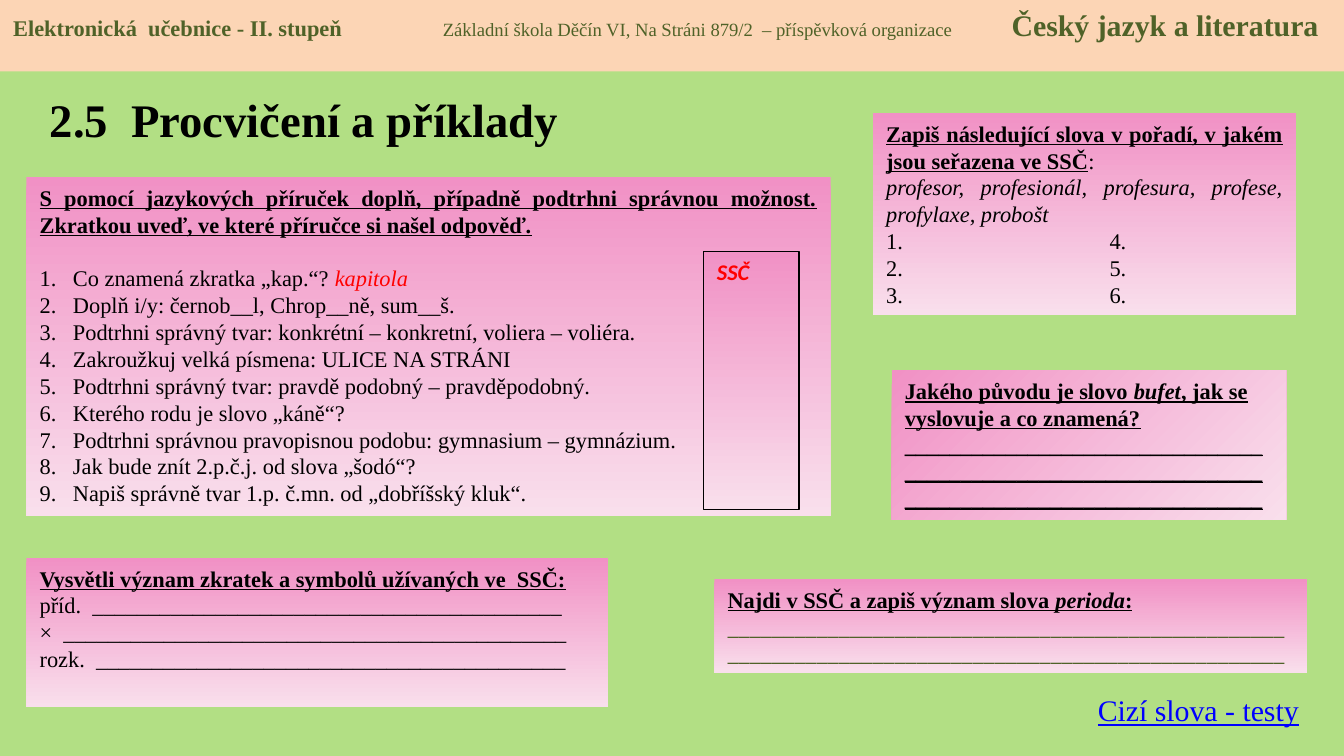
import pptx
import pptx.util
import pptx.dml.color
import pptx.enum.shapes
import pptx.enum.text
import pptx.oxml
import pptx.oxml.ns
from pptx.util import Cm, Pt

SERIF = "Times New Roman"
BLACK, RED, GREEN, BLUE = "000000", "FF0000", "4F6228", "0000FF"
HEADING = dict(bold=True, underline=True)
JUSTIFY = pptx.enum.text.PP_ALIGN.JUSTIFY


def colour(hex_string):
    return pptx.dml.color.RGBColor.from_string(hex_string)


def write(frame, paragraphs, align=pptx.enum.text.PP_ALIGN.LEFT, tabs=(), size=12):
    """Fill frame with paragraphs, each a list of (text, format) runs."""
    frame.word_wrap = True
    frame.vertical_anchor = pptx.enum.text.MSO_ANCHOR.TOP
    for index, runs in enumerate(paragraphs):
        paragraph = frame.paragraphs[0] if index == 0 else frame.add_paragraph()
        paragraph.alignment = align
        if tabs:
            tab_list = pptx.oxml.ns.qn("a:tabLst")
            stops = paragraph._p.get_or_add_pPr().makeelement(tab_list, {})
            paragraph._p.pPr.append(stops)
            for position in tabs:
                stop = stops.makeelement(pptx.oxml.ns.qn("a:tab"), {"pos": str(Cm(position)), "algn": "l"})
                stops.append(stop)
        for text, look in runs:
            run = paragraph.add_run()
            run.text = text
            run.font.name = look.get("font", SERIF)
            run.font.size = Pt(look.get("size", size))
            run.font.color.rgb = colour(look.get("color", BLACK))
            run.font.bold = look.get("bold", False)
            run.font.italic = look.get("italic", False)
            run.font.underline = look.get("underline", False)


presentation = pptx.Presentation()
presentation.slide_width, presentation.slide_height = Cm(25.4), Cm(14.29)
slide = presentation.slides.add_slide(presentation.slide_layouts[5])
slide.background.fill.solid()
slide.background.fill.fore_color.rgb = colour("B2DF84")

# Title
title = slide.shapes.title
title.left, title.top, title.width, title.height = Cm(0.69), Cm(1.55), Cm(12.8), Cm(1.4)
write(title.text_frame, [[("2.5  Procvičení a příklady", dict(bold=True))]], size=25)
title.text_frame.vertical_anchor = pptx.enum.text.MSO_ANCHOR.MIDDLE

# Panels: left, top, width, height, gradient angle
panels = []
for left, top, width, height, angle in [
    (0.5, 3.35, 15.2, 6.4, 270),
    (0, 0, 25.4, 1.35, None),
    (13.3, 4.75, 1.8, 4.88, 270),
    (0.5, 10.55, 11, 2.82, 270),
    (13.5, 10.95, 11.2, 1.77, 270),
    (16.5, 2.14, 8, 3.81, 270),
    (16.85, 7, 7.46, 2.83, 315),
]:
    panel = slide.shapes.add_shape(
        pptx.enum.shapes.MSO_SHAPE.RECTANGLE, Cm(left), Cm(top), Cm(width), Cm(height))
    panel.shadow.inherit = False
    panel.line.fill.background()
    if angle is None:
        panel.fill.solid()
        panel.fill.fore_color.rgb = colour("FCD5B5")
    else:
        panel.fill.gradient()
        panel.fill.gradient_angle = angle
        for stop, shade in zip(panel.fill.gradient_stops, ("F191C5", "F9DFEC")):
            stop.color.rgb = colour(shade)
    panels.append(panel)
exercise, header, answers, abbreviations, perioda, ordering, bufet = panels

# Main exercise with numbered questions
questions = [
    "Doplň i/y: černob__l, Chrop__ně, sum__š.",
    "Podtrhni správný tvar: konkrétní – konkretní, voliera – voliéra.",
    "Zakroužkuj velká písmena: ULICE NA STRÁNI",
    "Podtrhni správný tvar: pravdě podobný – pravděpodobný.",
    "Kterého rodu je slovo „káně“?",
    "Podtrhni správnou pravopisnou podobu: gymnasium – gymnázium.",
    "Jak bude znít 2.p.č.j. od slova „šodó“?",
    "Napiš správně tvar 1.p. č.mn. od „dobříšský kluk“.",
]
write(exercise.text_frame, [
    [("S pomocí jazykových příruček doplň, případně podtrhni správnou možnost. "
      "Zkratkou uveď, ve které příručce si našel odpověď.", HEADING)],
    [("Co znamená zkratka „kap.“? ", {}), ("kapitola", dict(color=RED, italic=True))],
    *[[(question, {})] for question in questions],
], align=JUSTIFY)
numbered = exercise.text_frame.paragraphs[1:]
numbered[0].space_before = Pt(14.4)
for paragraph in numbered:
    properties = paragraph._p.get_or_add_pPr()
    properties.set("marL", str(Cm(0.63)))
    properties.set("indent", str(Cm(-0.63)))
    properties.append(properties.makeelement(
        pptx.oxml.ns.qn("a:buAutoNum"), {"type": "arabicPeriod"}))

# Header band
write(header.text_frame, [[
    ("Elektronická  učebnice - II. stupeň\t", dict(color=GREEN, bold=True)),
    ("Základní škola Děčín VI, Na Stráni 879/2  – příspěvková organizace\t",
     dict(color=GREEN, size=10)),
    ("Český jazyk a literatura", dict(color=GREEN, size=16, bold=True)),
]], tabs=(8.12, 18.87))

# Answer column
answers.line.color.rgb = colour(BLACK)
answers.line.width = Pt(0.75)
write(answers.text_frame,
      [[("SSČ", dict(font="Calibri", color=RED, bold=True, italic=True))]])

# Smaller exercises
write(abbreviations.text_frame, [
    [("Vysvětli význam zkratek a symbolů užívaných ve  SSČ:", HEADING)],
    *[[(label + "  " + "_" * blanks, {})]
      for label, blanks in [("příd.", 42), ("×", 45), ("rozk.", 42)]],
])
write(perioda.text_frame, [
    [("Najdi v SSČ a zapiš význam slova ", HEADING),
     ("perioda", dict(HEADING, italic=True)), (":", HEADING)],
    [("_" * 100, dict(font="Calibri", color=GREEN))],
])
write(ordering.text_frame, [
    [("Zapiš následující slova v pořadí, v jakém jsou seřazena ve SSČ", HEADING), (":", {})],
    [("profesor, profesionál, profesura, profese, profylaxe, probošt", dict(italic=True))],
    *[[(f"{number}.\t{number + 3}.", {})] for number in (1, 2, 3)],
], align=JUSTIFY, tabs=(4.22,))
write(bufet.text_frame, [
    [("Jakého původu je slovo ", HEADING), ("bufet", dict(HEADING, italic=True)),
     (", jak se vyslovuje a co znamená?", HEADING)],
    [("_" * 96, HEADING)],
])

# Pointer to the tests
tests = slide.shapes.add_textbox(Cm(20.5), Cm(12.95), Cm(4.34), Cm(0.94))
write(tests.text_frame, [[("Cizí slova - testy", dict(color=BLUE, underline=True))]], size=16)
tests.text_frame.word_wrap = False

presentation.save("out.pptx")
